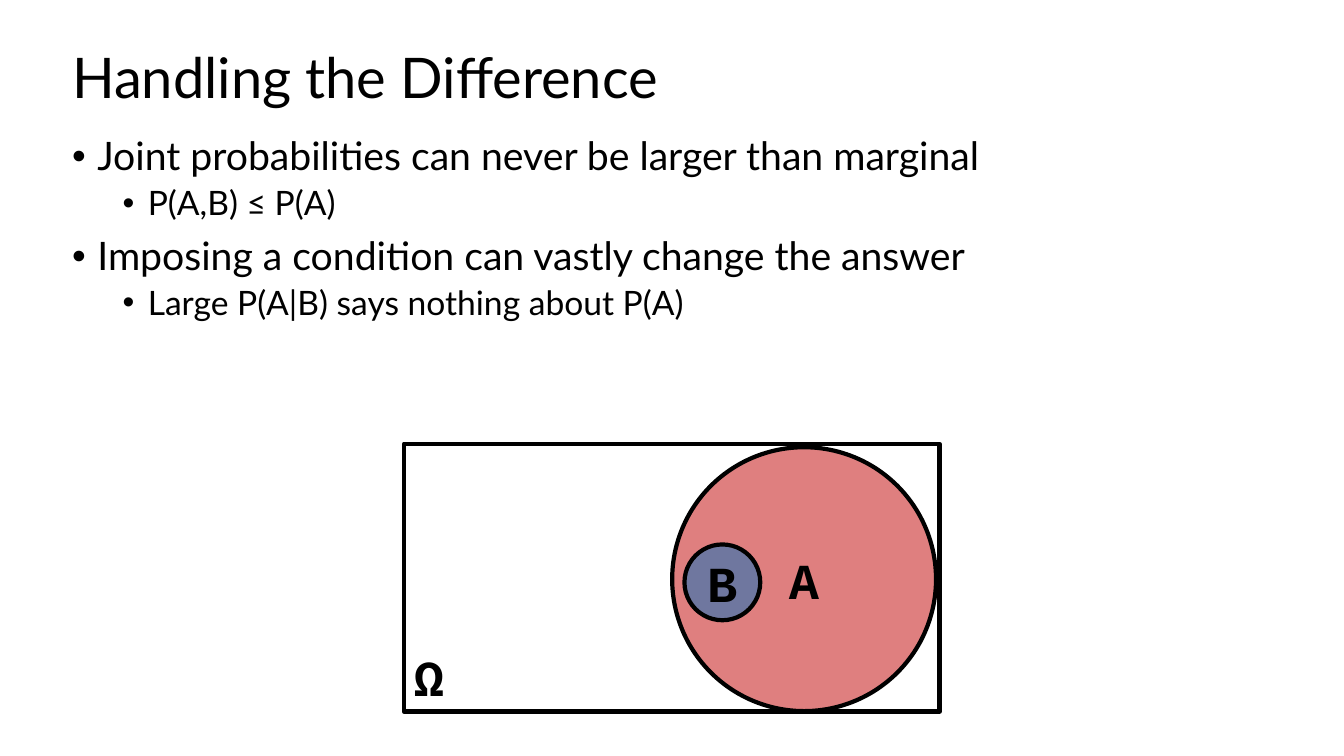
from dataclasses import dataclass
from typing import Optional

import pptx
import pptx.dml.color
import pptx.enum.shapes
import pptx.enum.text
import pptx.oxml
import pptx.oxml.ns
import pptx.util
from pptx.util import Cm, Pt

MSO_SHAPE = pptx.enum.shapes.MSO_SHAPE
ANCHOR = pptx.enum.text.MSO_ANCHOR
ALIGN = pptx.enum.text.PP_ALIGN
BLACK = "000000"


@dataclass
class Bullet:
    text: str
    level: int = 0


@dataclass
class EventSet:
    """One region of the Venn diagram, measured in centimetres."""
    label: str
    kind: MSO_SHAPE
    left: float
    top: float
    width: float
    height: float
    fill: Optional[str] = None
    anchor: ANCHOR = ANCHOR.MIDDLE
    align: ALIGN = ALIGN.CENTER


BULLETS = [
    Bullet("Joint probabilities can never be larger than marginal"),
    Bullet("P(A,B) ≤ P(A)", 1),
    Bullet("Imposing a condition can vastly change the answer"),
    Bullet("Large P(A|B) says nothing about P(A)", 1),
]

EVENT_SETS = [
    EventSet("Ω", MSO_SHAPE.RECTANGLE, 10.18, 11.18, 13.5, 6.75,
             anchor=ANCHOR.BOTTOM, align=ALIGN.LEFT),
    EventSet("A", MSO_SHAPE.OVAL, 16.94, 11.27, 6.65, 6.65, "C00000"),
    EventSet("B", MSO_SHAPE.OVAL, 17.25, 13.72, 1.91, 1.91, "0070C0"),
]


def rgb(value: str) -> pptx.dml.color.RGBColor:
    return pptx.dml.color.RGBColor.from_string(value)


def style(p, font: str, size: float, bold: bool = False) -> None:
    p.font.name = font
    p.font.size = Pt(size)
    p.font.bold = bold
    p.font.color.rgb = rgb(BLACK)


def add_text_frame(slide, left: float, top: float, width: float, height: float):
    sp = slide.shapes.add_textbox(Cm(left), Cm(top), Cm(width), Cm(height))
    tf = sp.text_frame
    tf.word_wrap = True
    return tf


def add_title(slide, text: str) -> None:
    tf = add_text_frame(slide, 1.57, 0.18, 21.9, 3.68)
    tf.vertical_anchor = ANCHOR.MIDDLE
    p = tf.paragraphs[0]
    p.text = text
    p.line_spacing = 0.9
    style(p, "Lato", 40)


def add_bullets(slide, bullets: list[Bullet]) -> None:
    tf = add_text_frame(slide, 1.57, 3.33, 30.38, 12.09)
    for i, bullet in enumerate(bullets):
        p = tf.add_paragraph() if i else tf.paragraphs[0]
        p.text = bullet.text
        p.level = bullet.level
        p.line_spacing = 0.9
        p.space_before = Pt(5 if bullet.level else 10)
        style(p, "Lato", 24 if bullet.level else 28)
        # Hanging indent and bullet character
        pPr = p._p.get_or_add_pPr()
        pPr.set("marL", str(Cm(0.635 + 1.27 * bullet.level)))
        pPr.set("indent", str(-Cm(0.635)))
        for tag, name, value in (("buFont", "typeface", "Arial"), ("buChar", "char", "•")):
            element = pptx.oxml.parse_xml(
                f'<a:{tag} {pptx.oxml.ns.nsdecls("a")} {name}="{value}"/>')
            pPr.insert_element_before(element, "a:tabLst", "a:defRPr", "a:extLst")


def add_event_set(slide, event: EventSet) -> None:
    sp = slide.shapes.add_shape(event.kind, Cm(event.left), Cm(event.top),
                                Cm(event.width), Cm(event.height))
    sp.shadow.inherit = False
    sp.line.color.rgb = rgb(BLACK)
    sp.line.width = Pt(3)
    if event.fill:
        sp.fill.solid()
        sp.fill.fore_color.rgb = rgb(event.fill)
        # Half-transparent, so that overlapping sets mix
        color = sp._element.spPr.find(".//" + pptx.oxml.ns.qn("a:srgbClr"))
        color.append(pptx.oxml.parse_xml(
            f'<a:alpha {pptx.oxml.ns.nsdecls("a")} val="50000"/>'))
    else:
        sp.fill.background()
    tf = sp.text_frame
    tf.vertical_anchor = event.anchor
    p = tf.paragraphs[0]
    p.text = event.label
    p.alignment = event.align
    style(p, "Courier New", 36, bold=True)


def main() -> None:
    prs = pptx.Presentation()
    prs.slide_width, prs.slide_height = Cm(33.87), Cm(19.05)
    slide = prs.slides.add_slide(prs.slide_layouts[6])

    # Heading and statements
    add_title(slide, "Handling the Difference")
    add_bullets(slide, BULLETS)

    # Venn diagram, from the sample space inwards
    for event in EVENT_SETS:
        add_event_set(slide, event)

    prs.save("out.pptx")


if __name__ == "__main__":
    main()
